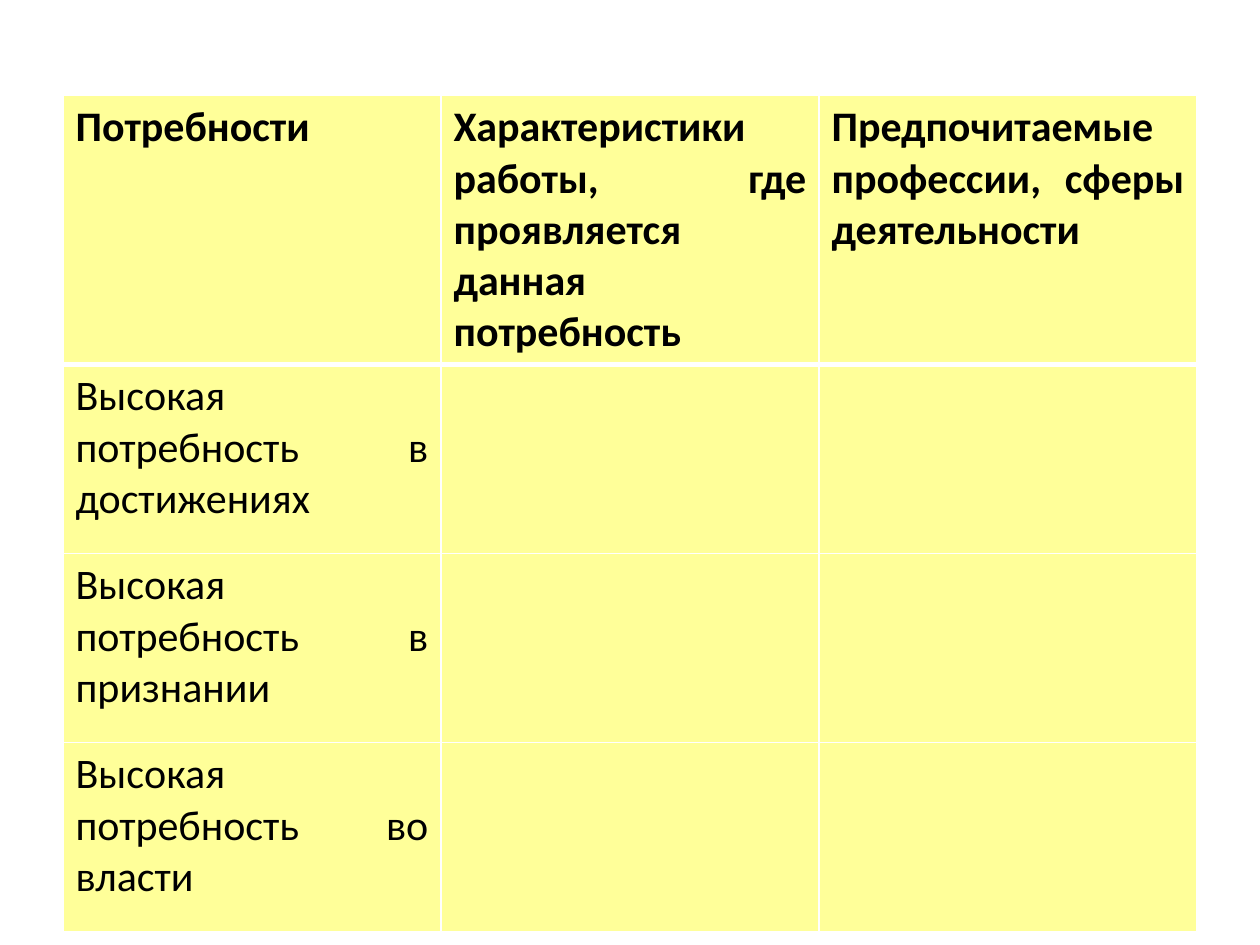
from lxml import etree
from pptx import Presentation
from pptx.dml.color import RGBColor
from pptx.enum.text import PP_ALIGN
from pptx.oxml.ns import qn
from pptx.util import Inches, Pt

JUSTIFY = PP_ALIGN.JUSTIFY
YELLOW = RGBColor(0xFF, 0xFF, 0x99)
WHITE = RGBColor(0xFF, 0xFF, 0xFF)
BLACK = RGBColor(0, 0, 0)
BLANK_LAYOUT = 6

HEADERS = [
    "Потребности",
    "Характеристики работы, где проявляется данная потребность",
    "Предпочитаемые профессии, сферы деятельности",
]
NEEDS = [
    "Высокая потребность в достижениях",
    "Высокая потребность в признании",
    "Высокая потребность во власти",
]


def write_text(cell, text, size=24, bold=False, color=BLACK, align=JUSTIFY):
    paragraph = cell.text_frame.paragraphs[0]
    paragraph.alignment = align
    run = paragraph.add_run()
    run.text = text
    run.font.name = "Calibri"
    run.font.size = Pt(size)
    run.font.bold = bold
    run.font.color.rgb = color


def set_borders(cell, color=WHITE, **widths):
    """Draw the given sides (L, R, T, B), with widths in points."""
    properties = cell._tc.get_or_add_tcPr()
    for position, (side, width) in enumerate(widths.items()):
        line = etree.Element(qn(f"a:ln{side}"), w=str(Pt(width)))
        fill = etree.SubElement(line, qn("a:solidFill"))
        etree.SubElement(fill, qn("a:srgbClr"), val=str(color))
        properties.insert(position, line)


def add_needs_table(slide, left, top, width, height, row_height):
    """Place the table; the header row grows to hold its text."""
    rows = [HEADERS] + [[need, "", ""] for need in NEEDS]
    frame = slide.shapes.add_table(
        len(rows), len(HEADERS), left, top, width, height
    )
    table = frame.table
    for row_index, texts in enumerate(rows):
        table.rows[row_index].height = row_height
        is_header = row_index == 0
        for column_index, text in enumerate(texts):
            cell = table.cell(row_index, column_index)
            cell.fill.solid()
            cell.fill.fore_color.rgb = YELLOW
            set_borders(
                cell,
                L=1,
                R=1,
                T=3 if row_index == 1 else 1,
                B=3 if is_header else 1,
            )
            if text:
                write_text(cell, text, bold=is_header)
    frame.height = height


def main():
    presentation = Presentation()
    presentation.slide_width = Inches(10)
    presentation.slide_height = Inches(7.5)
    slide = presentation.slides.add_slide(
        presentation.slide_layouts[BLANK_LAYOUT]
    )
    margin = presentation.slide_width // 20
    add_needs_table(
        slide,
        left=margin,
        top=Inches(0.76),
        width=presentation.slide_width - 2 * margin,
        height=Inches(6.59),
        row_height=presentation.slide_height // 5,
    )
    presentation.save("out.pptx")


if __name__ == "__main__":
    main()
